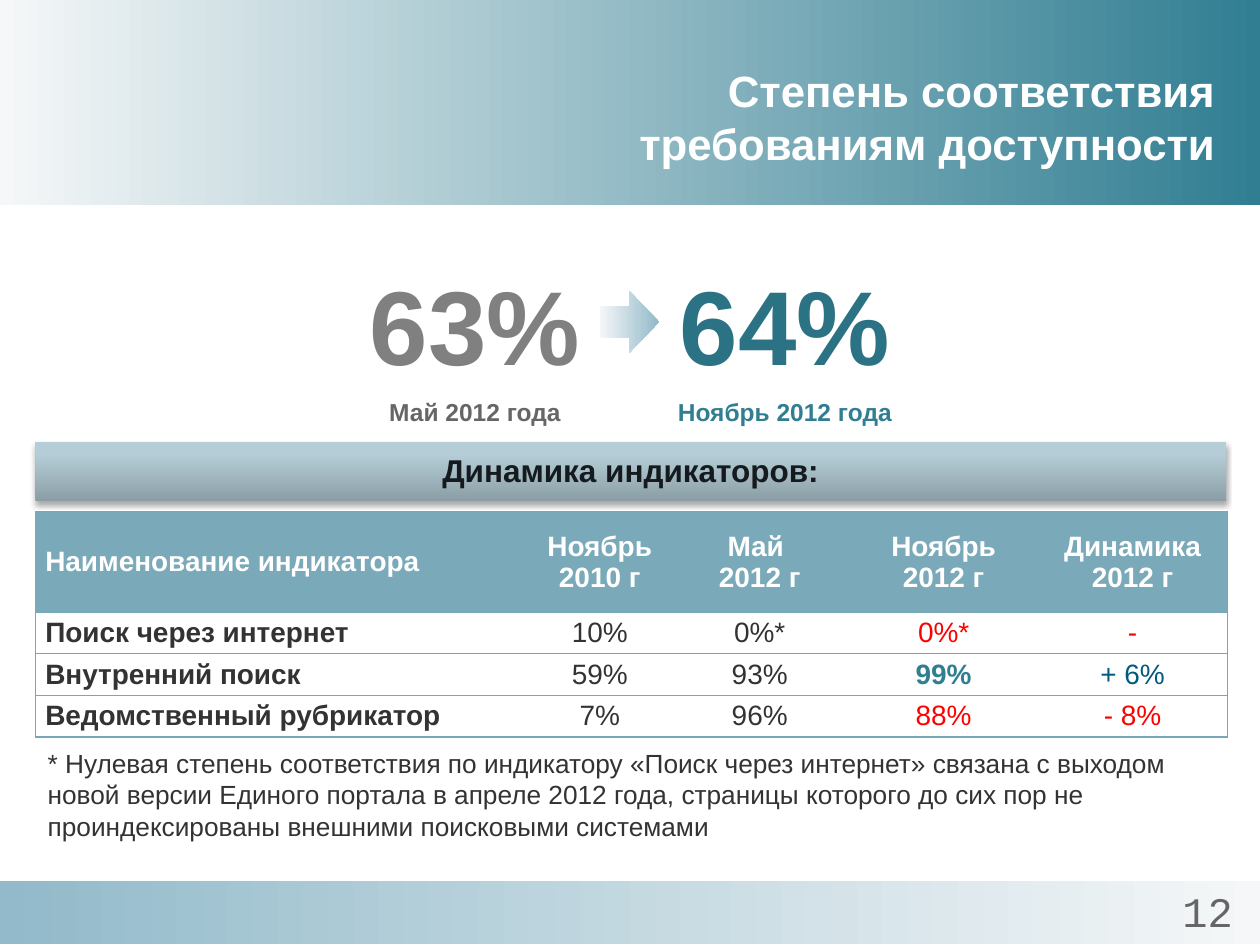
from dataclasses import dataclass

from lxml import etree
from pptx import Presentation
from pptx.dml.color import RGBColor
from pptx.enum import shapes, text
from pptx.oxml.ns import qn
from pptx.util import Emu, Pt

PX = 9144  # EMU per px, 100 px to the inch
TEAL, DARK, RED, WHITE = "317E92", "333333", "FF0000", "FFFFFF"
PALE, BLUE, BORDER, HEADER = "F5F7F8", "92BACA", "76A8B7", "7AA9B9"
LEFT, CENTER, RIGHT = text.PP_ALIGN.LEFT, text.PP_ALIGN.CENTER, text.PP_ALIGN.RIGHT


@dataclass(frozen=True)
class Box:
    left: int
    top: int
    width: int
    height: int

    def emu(self) -> list[Emu]:
        return [px(n) for n in (self.left, self.top, self.width, self.height)]


@dataclass(frozen=True)
class Style:
    size: float
    color: str
    bold: bool = False
    font: str = "Arial"


@dataclass(frozen=True)
class Score:
    left: int
    value: str
    value_color: str
    caption: str
    caption_color: str


@dataclass(frozen=True)
class Indicator:
    name: str
    values: tuple[str, str, str, str]
    latest: Style
    change: Style


def px(n: int) -> Emu:
    return Emu(n * PX)


def rgb(value: str) -> RGBColor:
    return RGBColor.from_string(value)


def add_run(paragraph, content: str, style: Style, align=LEFT) -> None:
    paragraph.alignment = align
    run = paragraph.add_run()
    run.text = content
    font = run.font
    font.size, font.bold, font.name = Pt(style.size), style.bold, style.font
    font.color.rgb = rgb(style.color)


def add_textbox(slide, box: Box):
    frame = slide.shapes.add_textbox(*box.emu()).text_frame
    frame.word_wrap = True
    return frame


def add_gradient_shape(slide, kind, box: Box, stops: list[tuple[int, str]], angle: int):
    """Stops are (percent, colour); the angle runs clockwise."""
    shape = slide.shapes.add_shape(kind, *box.emu())
    shape.shadow.inherit = False
    shape.line.fill.background()
    shape.fill.gradient()
    shape.fill.gradient_angle = -angle % 360
    stop_list = shape._element.spPr.find(qn("a:gradFill")).find(qn("a:gsLst"))
    for old in list(stop_list):
        stop_list.remove(old)
    for percent, color in stops:
        stop = etree.SubElement(stop_list, qn("a:gs"), pos=str(percent * 1000))
        etree.SubElement(stop, qn("a:srgbClr"), val=color)
    return shape


def add_shadow(shape) -> None:
    effects = shape._element.spPr.find(qn("a:effectLst"))
    shadow = etree.SubElement(
        effects, qn("a:outerShdw"), blurRad=str(Pt(3.1)), dist=str(Pt(1.8)),
        dir="5400000", rotWithShape="0")
    color = etree.SubElement(shadow, qn("a:srgbClr"), val="000000")
    etree.SubElement(color, qn("a:alpha"), val="35000")


def set_borders(cell, sides: str) -> None:
    """Draw the named sides (L, R, T, B) and clear the others."""
    properties = cell._tc.get_or_add_tcPr()
    for index, side in enumerate("LRTB"):
        line = etree.Element(qn(f"a:ln{side}"), w=str(Pt(0.75)))
        if side in sides:
            fill = etree.SubElement(line, qn("a:solidFill"))
            etree.SubElement(fill, qn("a:srgbClr"), val=BORDER)
        else:
            etree.SubElement(line, qn("a:noFill"))
        properties.insert(index, line)


def fill_cell(cell, lines: list[str], style: Style, align, fill: str, sides: str) -> None:
    cell.vertical_anchor = text.MSO_ANCHOR.MIDDLE
    cell.margin_left = cell.margin_right = px(8)
    cell.margin_top = cell.margin_bottom = 0
    cell.fill.solid()
    cell.fill.fore_color.rgb = rgb(fill)
    frame = cell.text_frame
    for index, line in enumerate(lines):
        paragraph = frame.add_paragraph() if index else frame.paragraphs[0]
        add_run(paragraph, line, style, align)
    set_borders(cell, sides)


def add_score(slide, score: Score) -> None:
    frame = add_textbox(slide, Box(score.left, 194, 274, 126))
    frame.margin_top = px(13)
    value, caption = frame.paragraphs[0], frame.add_paragraph()
    add_run(value, score.value, Style(60, score.value_color, True), CENTER)
    add_run(caption, score.caption, Style(14, score.caption_color, True), CENTER)
    value.space_after = caption.space_after = Pt(6)


def add_indicator_table(slide, headings: list[list[str]], indicators: list[Indicator]) -> None:
    widths, heights = [392, 112, 142, 150, 150], [80, 33, 33, 33]
    box = Box(28, 406, sum(widths), sum(heights))
    table = slide.shapes.add_table(len(heights), len(widths), *box.emu()).table
    for column, width in zip(table.columns, widths):
        column.width = px(width)
    for row, height in zip(table.rows, heights):
        row.height = px(height)

    name, plain = Style(16, DARK, True), Style(16, DARK)
    rows = [[(lines, Style(16, WHITE, True)) for lines in headings]]
    for item in indicators:
        styles = [name, plain, plain, item.latest, item.change]
        rows.append([([value], style) for value, style in zip((item.name, *item.values), styles)])
    last = len(widths) - 1
    for r, row in enumerate(rows):
        for c, (lines, style) in enumerate(row):
            sides = "TB" + ("L" if c == 0 else "R" if c == last else "")
            fill_cell(table.cell(r, c), lines, style, CENTER if c else LEFT,
                      WHITE if r else HEADER, sides)


def main() -> None:
    presentation = Presentation()
    presentation.slide_width, presentation.slide_height = px(1000), px(750)
    slide = presentation.slides.add_slide(presentation.slide_layouts[6])
    rectangle = shapes.MSO_SHAPE.RECTANGLE
    fade = [(0, PALE), (100, BLUE)]

    # Header and footer bands
    add_gradient_shape(slide, rectangle, Box(0, 0, 1000, 163), [(0, PALE), (100, TEAL)], 0)
    add_gradient_shape(slide, rectangle, Box(0, 699, 1000, 50), fade, 180)

    # Title
    title = add_textbox(slide, Box(381, 30, 593, 125))
    title.vertical_anchor = text.MSO_ANCHOR.MIDDLE
    add_run(title.paragraphs[0], "Степень соответствия требованиям доступности",
            Style(25, WHITE, True), RIGHT)

    # Overall scores
    add_score(slide, Score(240, "63%", "808080", "Май 2012 года", "666666"))
    add_score(slide, Score(486, "64%", "2B7284", "Ноябрь 2012 года", TEAL))
    add_gradient_shape(slide, shapes.MSO_SHAPE.RIGHT_ARROW, Box(476, 231, 47, 49), fade, 0)

    # Section band
    band = add_gradient_shape(slide, rectangle, Box(28, 351, 945, 47),
                              [(0, "8B9EA5"), (80, "B4CDD6"), (100, "B4CFD8")], 270)
    add_shadow(band)
    band.text_frame.word_wrap = False
    band.text_frame.vertical_anchor = text.MSO_ANCHOR.MIDDLE
    heading = band.text_frame.paragraphs[0]
    heading.line_spacing = 0.93
    add_run(heading, "Динамика индикаторов:", Style(18, "141A1D", True), CENTER)

    # Indicators
    red, rise = Style(16, RED), Style(16, "005A7C")
    add_indicator_table(
        slide,
        [["Наименование индикатора"], ["Ноябрь 2010 г"], ["Май ", "2012 г"],
         ["Ноябрь 2012 г"], ["Динамика", "2012 г"]],
        [Indicator("Поиск через интернет", ("10%", "0%*", "0%*", "-"), red, red),
         Indicator("Внутренний поиск", ("59%", "93%", "99%", "+ 6%"), Style(16, TEAL, True), rise),
         Indicator("Ведомственный рубрикатор", ("7%", "96%", "88%", "- 8%"), red, red)])

    # Footnote and page number
    note = add_textbox(slide, Box(28, 588, 945, 86)).paragraphs[0]
    add_run(note, "* Нулевая степень соответствия по индикатору «Поиск через интернет» связана "
            "с выходом новой версии Единого портала в апреле 2012 года, страницы которого "
            "до сих пор не проиндексированы внешними поисковыми системами", Style(15, DARK))
    number = add_textbox(slide, Box(917, 698, 83, 52)).paragraphs[0]
    add_run(number, "12", Style(24, "666666", font="Courier New"), CENTER)

    presentation.save("out.pptx")


if __name__ == "__main__":
    main()
